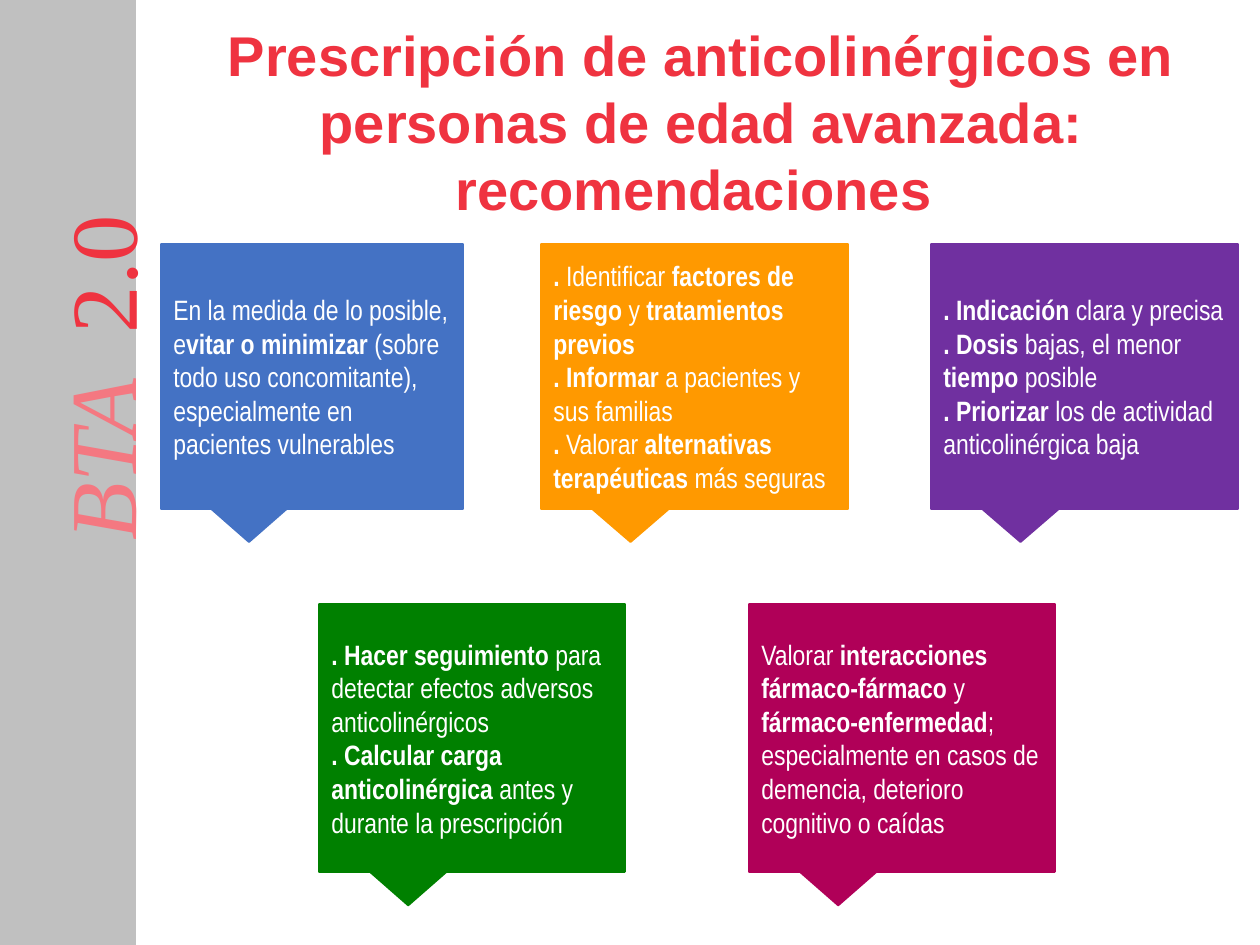
"""Build a slide of recommendations on prescribing anticholinergics to older people."""
import pptx
import pptx.dml.color
import pptx.enum.shapes
import pptx.enum.text
import pptx.util
from lxml import etree

PX = 914400 // 126
RED = "EF3340"


def color(value):
    return pptx.dml.color.RGBColor.from_string(value)


def add_block(kind, box, fill):
    shape = slide.shapes.add_shape(kind, *[length * PX for length in box])
    shape.shadow.inherit = False
    shape.fill.solid()
    shape.fill.fore_color.rgb = color(fill)
    shape.line.color.rgb = color(fill)
    shape.line.width = pptx.util.Pt(1)
    return shape


presentation = pptx.Presentation()
presentation.slide_width = 1260 * PX
presentation.slide_height = 945 * PX
slide = presentation.slides.add_slide(presentation.slide_layouts[5])

add_block(pptx.enum.shapes.MSO_SHAPE.RECTANGLE, (0, 0, 135, 945), "C0C0C0")

label = slide.shapes.add_textbox(-97 * PX, 267 * PX, 407 * PX, 164 * PX)
label.rotation = 270
label.text_frame.word_wrap = True
label.text_frame.margin_top = 18 * PX
paragraph = label.text_frame.paragraphs[0]
properties = paragraph._p.get_or_add_pPr()
tabs = etree.SubElement(properties, pptx.oxml.ns.qn("a:tabLst"))
etree.SubElement(tabs, pptx.oxml.ns.qn("a:tab"), pos=str(207 * PX), algn="l")
paragraph.font.name = "Times New Roman"
paragraph.font.size = pptx.util.Pt(54)
for text, tone, italic in [("BTA\t", "F47881", True), ("2.0", RED, False)]:
    run = paragraph.add_run()
    run.text = text
    run.font.color.rgb = color(tone)
    run.font.italic = italic

title = slide.shapes.title
title.left, title.top, title.width, title.height = [
    length * PX for length in (164, 14, 1075, 208)]
title.text_frame.text = (
    "Prescripción de anticolinérgicos en personas de edad avanzada: recomendaciones ")
title.text_frame.word_wrap = True
title.text_frame.auto_size = pptx.enum.text.MSO_AUTO_SIZE.NONE
title.text_frame.vertical_anchor = pptx.enum.text.MSO_ANCHOR.TOP
paragraph = title.text_frame.paragraphs[0]
paragraph.alignment = pptx.enum.text.PP_ALIGN.CENTER
paragraph.line_spacing = pptx.util.Pt(38.4)
paragraph.font.name = "Arial"
paragraph.font.size = pptx.util.Pt(32)
paragraph.font.bold = True
paragraph.font.color.rgb = color(RED)

# Asterisks enclose the bold words.
callouts = [
    ((161, 244, 302, 265), "4472C4", [
        "En la medida de lo posible, e*vitar o minimizar *(sobre todo uso "
        "concomitante), especialmente en pacientes vulnerables"]),
    ((541, 244, 307, 265), "FF9900", [
        "*.* Identificar *factores de riesgo* y *tratamientos previos*",
        "*. Informar *a pacientes y sus familias",
        "*.* Valorar *alternativas terapéuticas *más seguras"]),
    ((931, 244, 307, 265), "7030A0", [
        "*. Indicación* clara y precisa",
        "*. Dosis *bajas, el menor *tiempo* posible",
        "*. Priorizar* los de actividad anticolinérgica baja"]),
    ((319, 604, 306, 268), "008000", [
        "*. Hacer seguimiento* para detectar efectos adversos anticolinérgicos",
        "*. Calcular carga anticolinérgica *antes y durante la prescripción"]),
    ((749, 604, 306, 268), "B00058", [
        "Valorar *interacciones fármaco-fármaco* y *fármaco-enfermedad*; "
        "especialmente en casos de demencia, deterioro cognitivo o caídas"]),
]
for box, fill, lines in callouts:
    callout = add_block(pptx.enum.shapes.MSO_SHAPE.RECTANGULAR_CALLOUT, box, fill)
    frame = callout.text_frame
    frame.word_wrap = True
    frame.vertical_anchor = pptx.enum.text.MSO_ANCHOR.MIDDLE
    for index, line in enumerate(lines):
        paragraph = frame.add_paragraph() if index else frame.paragraphs[0]
        paragraph.alignment = pptx.enum.text.PP_ALIGN.LEFT
        paragraph.font.name = "Arial Narrow"
        paragraph.font.size = pptx.util.Pt(16)
        paragraph.font.color.rgb = color("FFFFFF")
        for position, text in enumerate(line.split("*")):
            if text:
                run = paragraph.add_run()
                run.text = text
                run.font.bold = position % 2 == 1

presentation.save("out.pptx")
